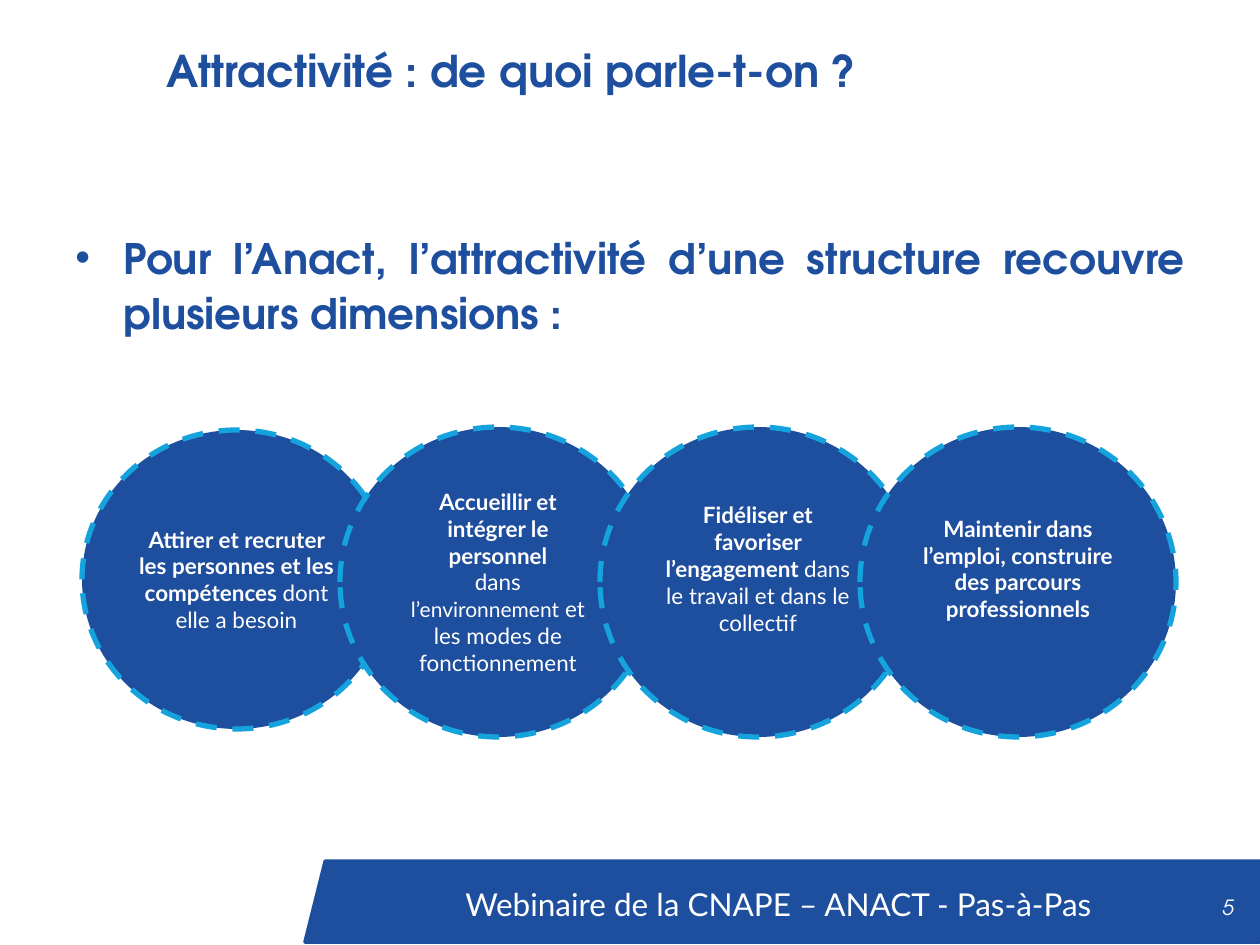
"""Build the slide on the dimensions of attractiveness."""
from lxml.etree import SubElement
from pptx import Presentation
from pptx.dml.color import RGBColor
from pptx.enum.dml import MSO_LINE
from pptx.enum.shapes import MSO_SHAPE
from pptx.enum.text import MSO_ANCHOR, PP_ALIGN
from pptx.oxml.ns import qn
from pptx.util import Emu, Pt

PX = 914400 / 126
BLUE, CYAN, WHITE = "1E4E9E", "15A3DD", "FFFFFF"
LATO, ADVENTOR = "Lato", "TeX Gyre Adventor"
BOLD = {"bold": True}
HEADING = {"name": ADVENTOR, "bold": True}
BULLET_INDENT = 48

BANNER = (305, 861, 975, 81)
TEXTS = [
    ("Webinaire de la CNAPE – ANACT - Pas-à-Pas", (310, 879, 937, 50), WHITE,
     {"name": LATO, "size": Pt(18)}, {"alignment": PP_ALIGN.CENTER}, MSO_ANCHOR.TOP),
    ("Attractivité : de quoi parle-t-on ?", (154, 38, 994, 115), BLUE,
     HEADING | {"size": Pt(25)}, {"alignment": PP_ALIGN.LEFT}, MSO_ANCHOR.TOP),
    ("Pour l’Anact, l’attractivité d’une structure recouvre plusieurs dimensions :",
     (63, 221, 1134, 624), BLUE, HEADING | {"size": Pt(24)},
     {"alignment": PP_ALIGN.JUSTIFY, "line_spacing": 1.1}, MSO_ANCHOR.TOP),
    ("5", (953, 882, 293, 50), WHITE,
     {"name": ADVENTOR, "size": Pt(12), "italic": True},
     {"alignment": PP_ALIGN.RIGHT}, MSO_ANCHOR.MIDDLE),
]
BULLETED = 2

FIRST_CIRCLE = (82, 430, 309, 299)
NEXT_CIRCLE, STEP = (340, 427, 316, 310), 260
DIMENSIONS = [
    {"side": 10, "bottom": 6, "runs": [
        ("Attirer et recruter les personnes et les compétences ", BOLD),
        ("dont elle a besoin", {})]},
    {"side": 15, "bottom": 6, "runs": [
        ("Accueillir et intégrer le personnel\v", BOLD), ("dans ", {}),
        ("l’environnement", {"size": Pt(12)}),
        (" et les modes de fonctionnement", {})]},
    {"side": 15, "bottom": 33, "runs": [
        ("Fidéliser et favoriser l’engagement ", BOLD),
        ("dans le travail et dans le collectif", {})]},
    {"side": 15, "bottom": 33, "runs": [
        ("Maintenir dans l’emploi, construire des parcours professionnels", BOLD)]},
]


def px(value):
    return Emu(round(value * PX))


def color(value):
    return RGBColor.from_string(value)


def apply(target, values):
    for name, value in values.items():
        setattr(target, name, value)


def add_run(paragraph, text, ink, font):
    head, line_break, tail = text.partition("\v")
    run = paragraph.add_run()
    run.text = head
    apply(run.font, font)
    run.font.color.rgb = color(ink)
    if line_break:
        paragraph.add_line_break()
    if tail:
        add_run(paragraph, tail, ink, font)


def add_bullet(paragraph):
    properties = paragraph._p.get_or_add_pPr()
    properties.set("marL", str(px(BULLET_INDENT)))
    properties.set("indent", str(-px(BULLET_INDENT)))
    SubElement(properties, qn("a:buFont")).set("typeface", "Arial")
    SubElement(properties, qn("a:buChar")).set("char", "•")


def add_outlined(slide, kind, box, edge, width):
    shape = slide.shapes.add_shape(kind, *map(px, box))
    shape.shadow.inherit = False
    shape.fill.solid()
    shape.fill.fore_color.rgb = color(BLUE)
    shape.line.color.rgb = color(edge)
    shape.line.width = Pt(width)
    return shape


def add_text(slide, text, box, ink, font, layout, anchor, bulleted):
    frame = slide.shapes.add_textbox(*map(px, box)).text_frame
    apply(frame, {"word_wrap": True, "vertical_anchor": anchor})
    paragraph = frame.paragraphs[0]
    apply(paragraph, layout)
    if bulleted:
        add_bullet(paragraph)
    add_run(paragraph, text, ink, font)


def add_dimension(slide, index, dimension):
    left, top, width, height = NEXT_CIRCLE
    box = (left + (index - 1) * STEP, top, width, height) if index else FIRST_CIRCLE
    circle = add_outlined(slide, MSO_SHAPE.OVAL, box, CYAN, 3)
    circle.line.dash_style = MSO_LINE.DASH
    frame = circle.text_frame
    apply(frame, {"word_wrap": True, "vertical_anchor": MSO_ANCHOR.MIDDLE,
                  "margin_left": px(dimension["side"]),
                  "margin_right": px(dimension["side"]),
                  "margin_top": px(6), "margin_bottom": px(dimension["bottom"])})
    paragraph = frame.paragraphs[0]
    paragraph.alignment = PP_ALIGN.CENTER
    for text, emphasis in dimension["runs"]:
        add_run(paragraph, text, WHITE, {"name": LATO, "size": Pt(12.8)} | emphasis)


def main():
    deck = Presentation()
    apply(deck, {"slide_width": px(1260), "slide_height": px(945)})
    slide = deck.slides.add_slide(deck.slide_layouts[6])
    add_outlined(slide, MSO_SHAPE.PARALLELOGRAM, BANNER, BLUE, 2)
    for index, entry in enumerate(TEXTS):
        add_text(slide, *entry, index == BULLETED)
    for index, dimension in enumerate(DIMENSIONS):
        add_dimension(slide, index, dimension)
    deck.save("out.pptx")


if __name__ == "__main__":
    main()
